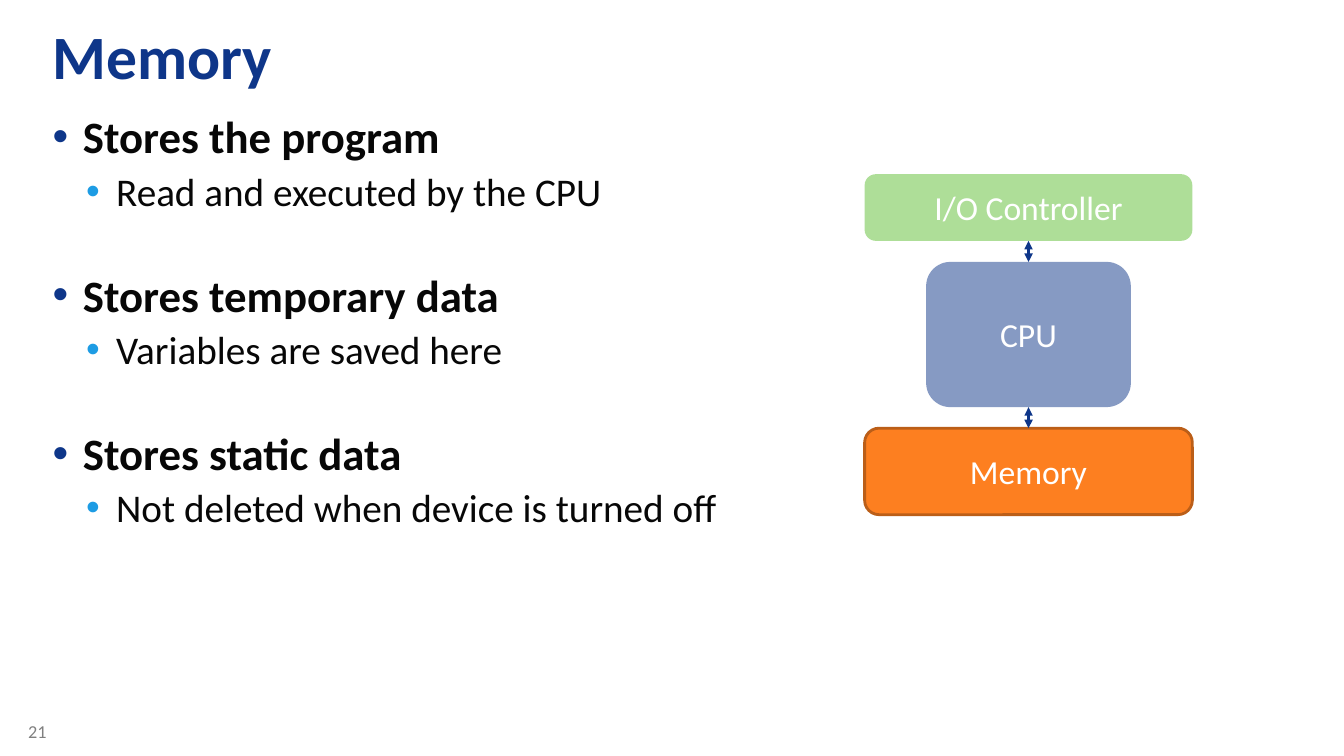
"""Build the Memory slide: bullet points beside a block diagram of a computer."""
from dataclasses import dataclass
from typing import Optional

from lxml import etree
from pptx import Presentation
from pptx import util as u
from pptx.dml.color import RGBColor
from pptx.enum import shapes, text
from pptx.oxml import ns

FONT = "Calibri"
NAVY, SKY, INK, WHITE, GREY = "0E3689", "1D9CE4", "070707", "FFFFFF", "808080"
DIAGRAM_CENTRE, DIAGRAM_TOP, BLOCK_GAP = 25.92, 4.39, 0.53


@dataclass
class Block:
    label: str
    width: float
    height: float
    fill: str
    alpha: int = 100
    line: Optional[str] = None


@dataclass
class Level:
    size: int
    bold: bool
    bullet: str
    margin: float


@dataclass
class Topic:
    heading: str
    detail: str


HEADING = Level(32, True, NAVY, 0.76)
DETAIL = Level(28, False, SKY, 1.6)
TOPICS = [
    Topic("Stores the program", "Read and executed by the CPU"),
    Topic("Stores temporary data", "Variables are saved here"),
    Topic("Stores static data", "Not deleted when device is turned off"),
]
BLOCKS = [
    Block("I/O Controller", 8.26, 1.68, "5EBF33", alpha=50),
    Block("CPU", 5.16, 3.66, NAVY, alpha=50),
    Block("Memory", 8.26, 2.18, "FD7F20", line="BB5E18"),
]


def rgb(value: str) -> RGBColor:
    return RGBColor.from_string(value)


def add_run(p, content: str, size: float, color: str, bold: bool = False) -> None:
    r = p.add_run()
    r.text = content
    r.font.name = FONT
    r.font.size = u.Pt(size)
    r.font.bold = bold
    r.font.color.rgb = rgb(color)


def add_box(s, left: float, top: float, width: float, height: float,
            inset_x: float = 0.33, inset_y: float = 0.18):
    tf = s.shapes.add_textbox(u.Cm(left), u.Cm(top), u.Cm(width), u.Cm(height)).text_frame
    tf.word_wrap = True
    tf.margin_left = tf.margin_right = u.Cm(inset_x)
    tf.margin_top = tf.margin_bottom = u.Cm(inset_y)
    return tf


def add_bullet(p, content: str, level: Level, before: float) -> None:
    pPr = p._p.get_or_add_pPr()
    pPr.set("marL", str(u.Cm(level.margin)))
    pPr.set("indent", str(u.Cm(-0.76)))
    color = etree.SubElement(pPr, ns.qn("a:buClr"))
    etree.SubElement(color, ns.qn("a:srgbClr"), val=level.bullet)
    etree.SubElement(pPr, ns.qn("a:buFont"), typeface="Arial")
    etree.SubElement(pPr, ns.qn("a:buChar"), char="•")
    p.space_before = u.Pt(before)
    add_run(p, content, level.size, INK, level.bold)


def add_topics(tf, topics: list[Topic]) -> None:
    for i, topic in enumerate(topics):
        p = tf.add_paragraph() if i else tf.paragraphs[0]
        add_bullet(p, topic.heading, HEADING, 38 if i else 0)
        add_bullet(tf.add_paragraph(), topic.detail, DETAIL, 3)


def add_block(s, block: Block, top: float):
    sp = s.shapes.add_shape(
        shapes.MSO_SHAPE.ROUNDED_RECTANGLE, u.Cm(DIAGRAM_CENTRE - block.width / 2),
        u.Cm(top), u.Cm(block.width), u.Cm(block.height))
    sp.shadow.inherit = False
    sp.fill.solid()
    sp.fill.fore_color.rgb = rgb(block.fill)
    if block.alpha < 100:
        color = sp.fill._xPr.find(".//" + ns.qn("a:srgbClr"))
        etree.SubElement(color, ns.qn("a:alpha"), val=str(block.alpha * 1000))
    if block.line:
        sp.line.color.rgb = rgb(block.line)
        sp.line.width = u.Pt(2)
    else:
        sp.line.fill.background()
    tf = sp.text_frame
    tf.word_wrap = True
    tf.vertical_anchor = text.MSO_ANCHOR.MIDDLE
    p = tf.paragraphs[0]
    p.alignment = text.PP_ALIGN.CENTER
    add_run(p, block.label, 24, WHITE)
    return sp


def add_arrow(s, upper, lower) -> None:
    arrow = s.shapes.add_connector(shapes.MSO_CONNECTOR.STRAIGHT, 0, 0, 0, 0)
    arrow.begin_connect(upper, 2)
    arrow.end_connect(lower, 0)
    arrow.line.color.rgb = rgb(NAVY)
    arrow.line.width = u.Pt(2)
    ln = arrow.line._get_or_add_ln()
    for end in ("a:headEnd", "a:tailEnd"):
        etree.SubElement(ln, ns.qn(end), type="triangle")
    etree.SubElement(arrow._element.spPr, ns.qn("a:effectLst"))


def add_diagram(s, blocks: list[Block]) -> None:
    top, drawn = DIAGRAM_TOP, []
    for block in blocks:
        drawn.append(add_block(s, block, top))
        top += block.height + BLOCK_GAP
    for upper, lower in zip(drawn, drawn[1:]):
        add_arrow(s, upper, lower)


def main() -> None:
    prs = Presentation()
    prs.slide_width, prs.slide_height = u.Cm(33.87), u.Cm(19.05)
    s = prs.slides.add_slide(prs.slide_layouts[6])
    number = add_box(s, 0.46, 18.03, 1.5, 1.02, 0.25, 0.13)
    add_run(number.paragraphs[0], "21", 13, GREY)
    title = add_box(s, 1, 0.28, 31.67, 2.16)
    add_run(title.paragraphs[0], "Memory", 44, NAVY, bold=True)
    add_topics(add_box(s, 1, 2.57, 31.67, 14.96), TOPICS)
    add_diagram(s, BLOCKS)
    prs.save("out.pptx")


if __name__ == "__main__":
    main()
